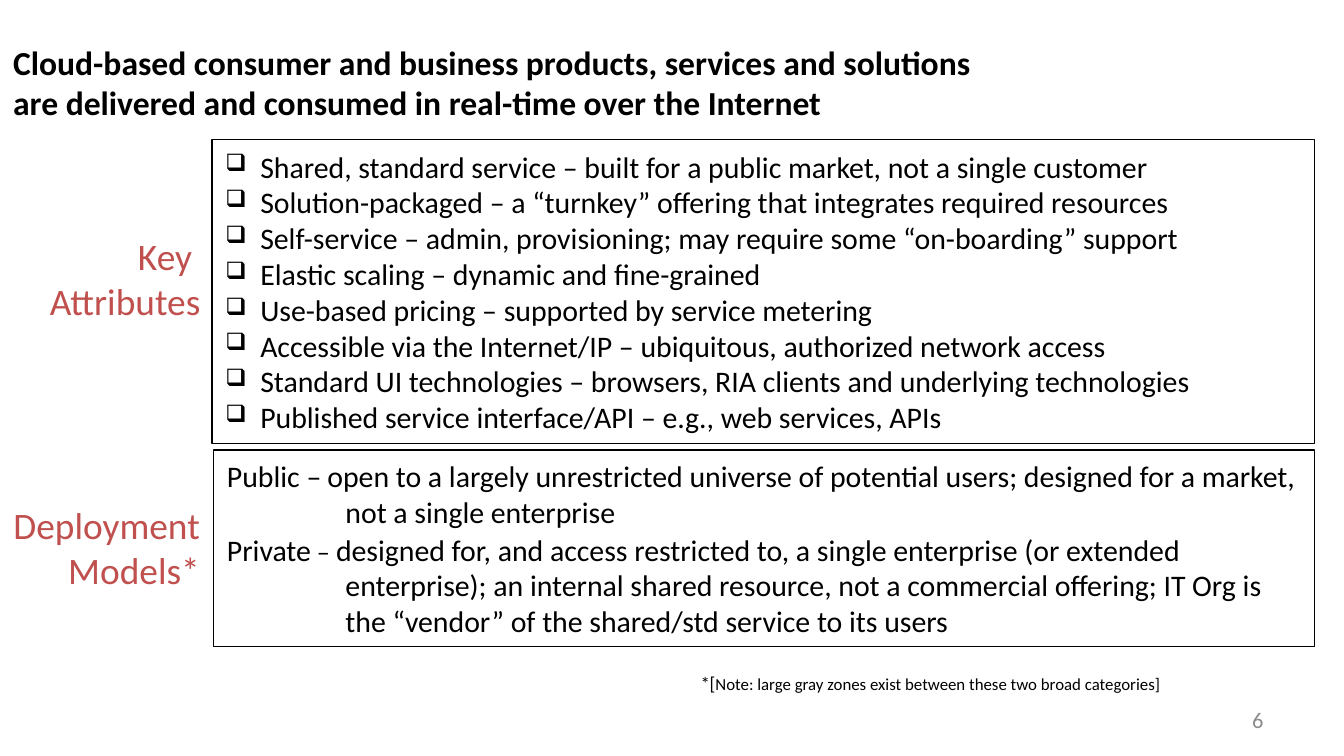
from lxml import etree
from pptx import Presentation
from pptx import util as u
from pptx.dml.color import RGBColor
from pptx.enum import shapes, text
from pptx.oxml import ns

BLACK = RGBColor(0x00, 0x00, 0x00)
RED = RGBColor(0xC0, 0x50, 0x4D)
GRAY = RGBColor(0x8C, 0x8C, 0x8C)
LEFT, MID, RIGHT = text.PP_ALIGN.LEFT, text.PP_ALIGN.CENTER, text.PP_ALIGN.RIGHT

deck = Presentation()
deck.slide_width, deck.slide_height = u.Cm(25.4), u.Cm(14.29)
slide = deck.slides.add_slide(deck.slide_layouts[6])


def add_box(x, y, w, h, framed=False):
    """Add a text box, or a black outlined rectangle, and return its frame."""
    place = [u.Cm(n) for n in (x, y, w, h)]
    if framed:
        box = slide.shapes.add_shape(shapes.MSO_SHAPE.RECTANGLE, *place)
        box.shadow.inherit = False
        box.fill.background()
        box.line.color.rgb = BLACK
        box.line.width = u.Pt(0.75)
    else:
        box = slide.shapes.add_textbox(*place)
    frame = box.text_frame
    frame.word_wrap = True
    frame.vertical_anchor = text.MSO_ANCHOR.MIDDLE if framed else text.MSO_ANCHOR.TOP
    return frame


def fill_par(par, parts, color=BLACK, align=LEFT, bold=False, indent=0):
    """Write (words, size) parts into a paragraph with a hanging indent."""
    par.alignment = align
    if indent:
        props = par._p.get_or_add_pPr()
        props.set("marL", str(u.Cm(indent)))
        props.set("indent", str(-u.Cm(indent)))
    par.text = parts[0][0]
    sizes = [parts[0][1]] * len(par.runs)
    for words, size in parts[1:]:
        par.add_run().text = words
        sizes.append(size)
    for run, size in zip(par.runs, sizes):
        run.font.name = "Calibri"
        run.font.size = u.Pt(size)
        run.font.bold = bold
        run.font.color.rgb = color


# Title
title = add_box(0, 0.66, 18.82, 2.06)
fill_par(title.paragraphs[0], [(
    "Cloud-based consumer and business products, services and solutions "
    "are delivered and consumed in real-time over the Internet", 18)], bold=True)

# Deployment models
models = [
    [("Public –", 16), (" ", 14),
     ("open to a largely unrestricted universe of potential users; "
      "designed for a market, not a single enterprise", 16)],
    [("Private", 16), (" – ", 14),
     ("designed for, and access restricted to, a single enterprise (or extended "
      "enterprise); an internal shared resource, not a commercial offering; "
      "IT Org is the “vendor” of the shared/std service to its users", 16)],
]
frame = add_box(4.04, 8.51, 20.8, 3.71, framed=True)
for i, parts in enumerate(models):
    par = frame.add_paragraph() if i else frame.paragraphs[0]
    fill_par(par, parts, indent=2.24)
    if i:
        par.space_before = u.Pt(1)

# Key attributes
traits = [
    "Shared, standard service – built for a public market, not a single customer",
    "Solution-packaged – a “turnkey” offering that integrates required resources",
    "Self-service – admin, provisioning; may require some “on-boarding” support",
    "Elastic scaling – dynamic and fine-grained",
    "Use-based pricing – supported by service metering",
    "Accessible via the Internet/IP – ubiquitous, authorized network access",
    "Standard UI technologies – browsers, RIA clients and underlying technologies",
    "Published service interface/API – e.g., web services, APIs",
]
frame = add_box(4.01, 2.64, 20.83, 5.74, framed=True)
for i, trait in enumerate(traits):
    par = frame.add_paragraph() if i else frame.paragraphs[0]
    props = par._p.get_or_add_pPr()
    etree.SubElement(props, ns.qn("a:buSzPct")).set("val", "80000")
    etree.SubElement(props, ns.qn("a:buChar")).set("char", "❑")
    fill_par(par, [(trait, 16)], indent=0.66)

# Side labels
label = add_box(0.1, 4.29, 3.94, 2.39)
fill_par(label.paragraphs[0], [("Key \vAttributes", 20)], RED, RIGHT)
label = add_box(-0.03, 9.37, 4.06, 1.96)
label.word_wrap = False
fill_par(label.paragraphs[0], [("Deployment\vModels*", 20)], RED, RIGHT)

# Footnote and page number
note = add_box(10.39, 12.57, 14.45, 0.69)
note.vertical_anchor = text.MSO_ANCHOR.MIDDLE
fill_par(note.paragraphs[0], [
    ("*[", 10),
    ("Note: large gray zones exist between these two broad categories] ", 9)], align=MID)
page = add_box(18.21, 13.23, 5.92, 0.76)
page.vertical_anchor = text.MSO_ANCHOR.MIDDLE
fill_par(page.paragraphs[0], [("6", 12)], GRAY, RIGHT)

deck.save("out.pptx")
